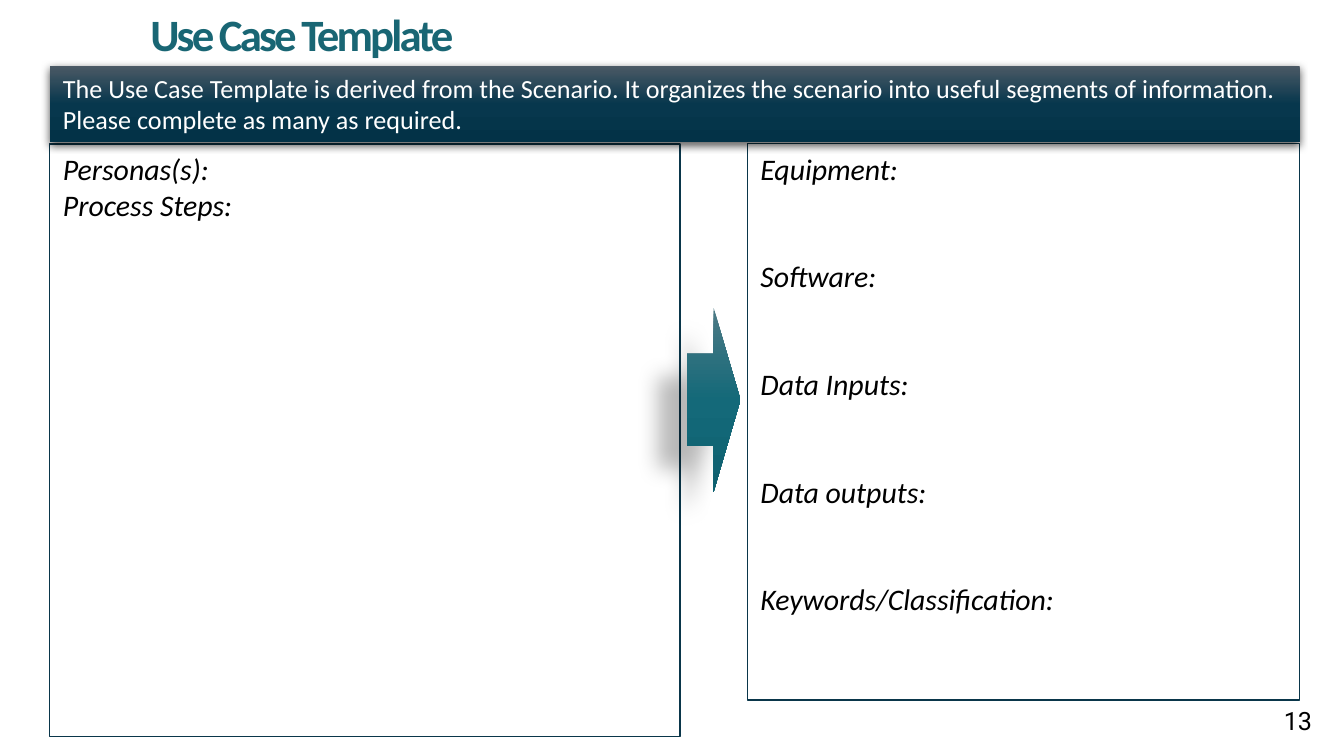
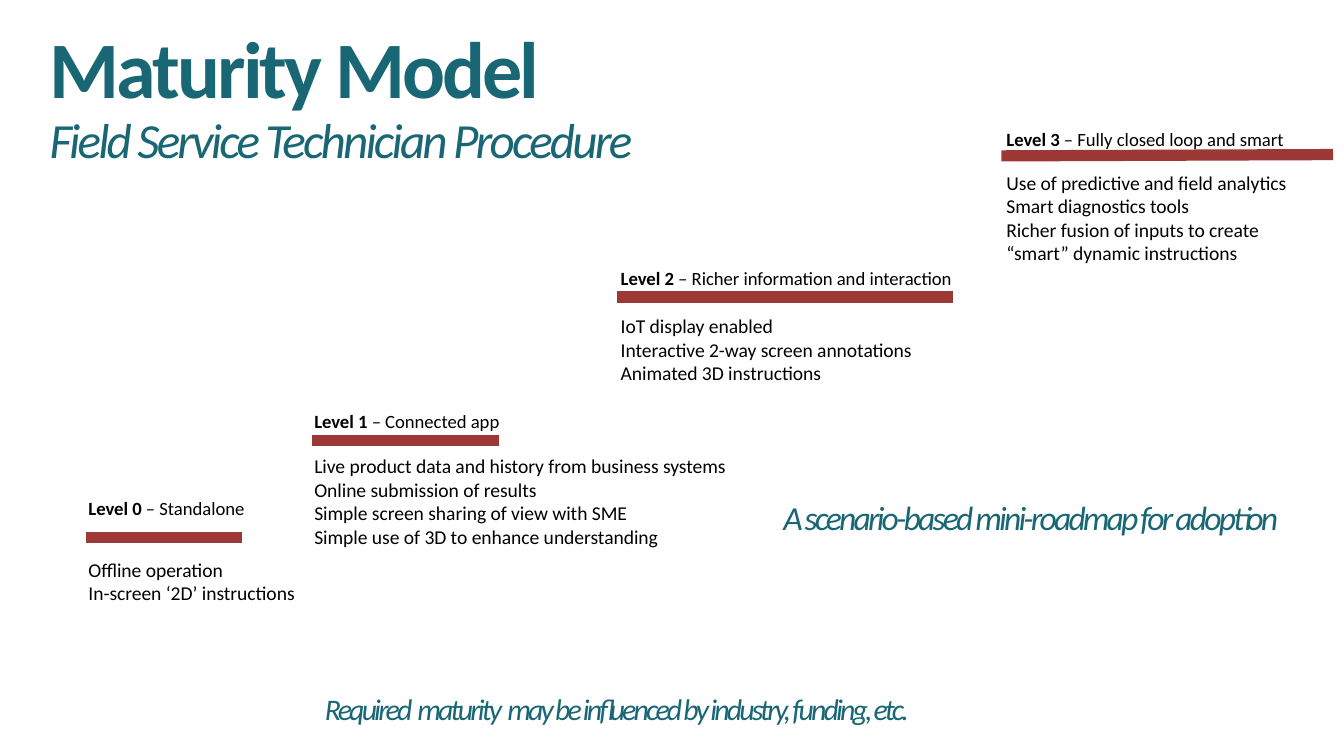
from dataclasses import dataclass

from lxml import etree
from pptx import Presentation
from pptx.dml.color import RGBColor
from pptx.enum.shapes import MSO_CONNECTOR, MSO_SHAPE
from pptx.enum.text import MSO_ANCHOR, PP_ALIGN
from pptx.oxml.ns import qn
from pptx.util import Inches, Pt

RECTANGLE = MSO_SHAPE.RECTANGLE
RIGHT_ARROW = MSO_SHAPE.RIGHT_ARROW
STRAIGHT = MSO_CONNECTOR.STRAIGHT
TOP, MIDDLE = MSO_ANCHOR.TOP, MSO_ANCHOR.MIDDLE
LEFT, RIGHT = PP_ALIGN.LEFT, PP_ALIGN.RIGHT


@dataclass(frozen=True)
class Theme:
    font: str = "Calibri"
    number_font: str = "Roboto"
    teal: str = "196674"
    navy: str = "0A364A"
    red: str = "9C3836"
    black: str = "000000"
    white: str = "FFFFFF"
    arrow_gradient: tuple = ("4D7A85", "146979", "0E606F")
    band_gradient: tuple = ("4B5965", "07374D", "033247")
    headline: float = 42.9
    subtitle: float = 26.3
    title: float = 24
    callout: float = 18
    label: float = 16
    band: float = 14
    number: float = 13.5
    body: float = 10.5
    level: float = 10
    tight: float = -1.5


def write_text(frame, paragraphs, *, size, color, font, bold=False, italic=False,
               tracking=0, align=LEFT, anchor=TOP, wrap=True, gap=0, line_spacing=None):
    """Fill a frame; a paragraph is a string or a list of (text, overrides) runs."""
    frame.word_wrap = wrap
    frame.vertical_anchor = anchor
    for index, content in enumerate(paragraphs):
        paragraph = frame.paragraphs[0] if index == 0 else frame.add_paragraph()
        paragraph.alignment = align
        if line_spacing:
            paragraph.line_spacing = line_spacing
        if index and gap:
            paragraph.space_before = Pt(gap)
        runs = [(content, {})] if isinstance(content, str) else content
        for text, overrides in runs:
            if text == "\n":
                paragraph.add_line_break()
                continue
            style = {"size": size, "bold": bold, "italic": italic, **overrides}
            run = paragraph.add_run()
            run.text = text
            run.font.name = font
            run.font.size = Pt(style["size"])
            run.font.bold = style["bold"]
            run.font.italic = style["italic"]
            run.font.color.rgb = RGBColor.from_string(color)
            if tracking:
                run.font._element.set("spc", str(round(tracking * 100)))


class Deck:
    def __init__(self, theme):
        self.theme = theme
        self.presentation = Presentation()
        self.presentation.slide_width = Inches(10)
        self.presentation.slide_height = Inches(10) * 9 // 16
        self.slide = None

    def add_slide(self):
        self.slide = self.presentation.slides.add_slide(self.presentation.slide_layouts[6])

    def text(self, box, paragraphs, **style):
        shape = self.slide.shapes.add_textbox(*map(Inches, box))
        style = {"font": self.theme.font, "color": self.theme.black, **style}
        write_text(shape.text_frame, paragraphs, **style)

    def accent(self, box, paragraphs, **style):
        """Teal, tightly tracked text for titles and callouts."""
        self.text(box, paragraphs, color=self.theme.teal, tracking=self.theme.tight, **style)

    def shape(self, kind, box, line=None, gradient=None, shadow=None):
        shape = self.slide.shapes.add_shape(kind, *map(Inches, box))
        shape.shadow.inherit = False
        if gradient:
            self.fill_gradient(shape, gradient)
        else:
            shape.fill.background()
        if line:
            shape.line.color.rgb = RGBColor.from_string(line)
            shape.line.width = Pt(0.75)
        else:
            shape.line.fill.background()
        if shadow:
            self.cast_shadow(shape, *shadow)
        return shape

    def fill_gradient(self, shape, colors):
        """Spread the colours evenly from top to bottom."""
        shape.fill.gradient()
        shape.fill.gradient_angle = 270
        stops = shape._element.spPr.find(qn("a:gradFill")).find(qn("a:gsLst"))
        for stop in list(stops):
            stops.remove(stop)
        for index, color in enumerate(colors):
            position = 100000 * index // (len(colors) - 1)
            stop = etree.SubElement(stops, qn("a:gs"), pos=str(position))
            etree.SubElement(stop, qn("a:srgbClr"), val=color)

    def cast_shadow(self, shape, opacity, blur, distance, angle):
        effects = shape._element.spPr.find(qn("a:effectLst"))
        outer = etree.SubElement(effects, qn("a:outerShdw"), blurRad=str(Pt(blur)),
                                 dist=str(Pt(distance)), dir=str(angle * 60000),
                                 rotWithShape="0")
        color = etree.SubElement(outer, qn("a:srgbClr"), val=self.theme.black)
        etree.SubElement(color, qn("a:alpha"), val=str(opacity * 1000))

    def panel(self, box, labels, gap=0):
        shape = self.shape(RECTANGLE, box, line=self.theme.navy)
        write_text(shape.text_frame, labels, size=self.theme.label, italic=True,
                   color=self.theme.black, font=self.theme.font, gap=gap)

    def band(self, box, text):
        shape = self.shape(RECTANGLE, box, gradient=self.theme.band_gradient,
                           shadow=(63, 4.5, 1.5, 90))
        write_text(shape.text_frame, [text], size=self.theme.band,
                   color=self.theme.white, font=self.theme.font)

    def bar(self, start, end):
        points = map(Inches, (*start, *end))
        connector = self.slide.shapes.add_connector(STRAIGHT, *points)
        connector.line.color.rgb = RGBColor.from_string(self.theme.red)
        connector.line.width = Pt(6)
        etree.SubElement(connector._element.spPr, qn("a:effectLst"))

    def level(self, number, name, left, top, width, bar, body_top, body_width, items,
              wrap=False, rows=None):
        """One maturity step: heading, red bar and list of abilities."""
        self.bar(*bar)
        heading = [(f"Level {number} ", {"bold": True}), (f"– {name}", {})]
        self.text((left, top, width, 0.27), [heading], size=self.theme.level, wrap=False)
        height = 0.1 + 0.18 * (rows or len(items))
        self.text((left, body_top, body_width, height), items,
                  size=self.theme.body, wrap=wrap)


def build_use_case(deck):
    theme = deck.theme
    deck.add_slide()

    # Slide number and title
    deck.text((7.61, 5.21, 2.25, 0.3), ["13"], size=theme.number,
              font=theme.number_font, align=RIGHT, anchor=MIDDLE)
    deck.accent((1.02, 0, 8.98, 0.5), ["Use Case Template"], size=theme.title, bold=True)

    # Scenario panels and the arrow between them
    deck.panel((0.37, 1.07, 4.69, 4.41), ["Personas(s):", "Process Steps:"])
    deck.panel((5.56, 1.07, 4.11, 4.14),
               ["Equipment:", "Software:", "Data Inputs:", "Data outputs:",
                "Keywords/Classification:"], gap=38.5)
    deck.shape(RIGHT_ARROW, (5.11, 2.29, 0.4, 1.37), gradient=theme.arrow_gradient,
               shadow=(28, 11.8, 19.7, 141))

    # Introduction band
    deck.band((0.37, 0.49, 9.3, 0.57),
              "The Use Case Template is derived from the Scenario. It organizes the "
              "scenario into useful segments of information. Please complete as many "
              "as required.")


def build_maturity_model(deck):
    theme = deck.theme
    deck.add_slide()

    # Steps, from lowest to highest
    deck.level(0, "Standalone", 0.56, 3.65, 1.38, ((0.64, 4), (1.8, 4)), 4.1, 1.77,
               ["Offline operation", "In-screen ‘2D’ instructions"])
    deck.level(1, "Connected app", 2.24, 3, 1.6, ((2.32, 3.28), (3.71, 3.28)), 3.33, 3.33,
               ["Live product data and history from business systems",
                "Online submission of results",
                "Simple screen sharing of view with SME",
                "Simple use of 3D to enhance understanding"])
    deck.level(2, "Richer information and interaction", 4.52, 1.94, 2.71,
               ((4.59, 2.21), (7.09, 2.21)), 2.29, 2.42,
               ["IoT display enabled", "Interactive 2-way screen annotations",
                "Animated 3D instructions"])
    deck.level(3, "Fully closed loop and smart", 7.39, 0.9, 2.29,
               ((7.45, 1.16), (9.92, 1.15)), 1.22, 2.42,
               ["Use of predictive and field analytics", "Smart diagnostics tools",
                "Richer fusion of inputs to create “smart” dynamic instructions"],
               wrap=True, rows=4)

    # Callouts
    deck.accent((5.73, 3.65, 4.87, 0.4), ["A scenario-based mini-roadmap for adoption"],
                size=theme.callout, italic=True)
    deck.accent((2.32, 5.09, 4.87, 0.37),
                ["Required  maturity  may be influenced by industry, funding, etc."],
                size=theme.label, italic=True)

    # Title with subtitle
    subtitle = {"size": theme.subtitle, "bold": False, "italic": True}
    deck.accent((0.27, 0.17, 8.62, 1.22),
                [[("Maturity Model", {}), ("\n", {}),
                  ("Field Service Technician Procedure", subtitle)]],
                size=theme.headline, bold=True, line_spacing=0.9)


def main():
    deck = Deck(Theme())
    build_use_case(deck)
    build_maturity_model(deck)
    deck.presentation.save("out.pptx")


if __name__ == "__main__":
    main()
